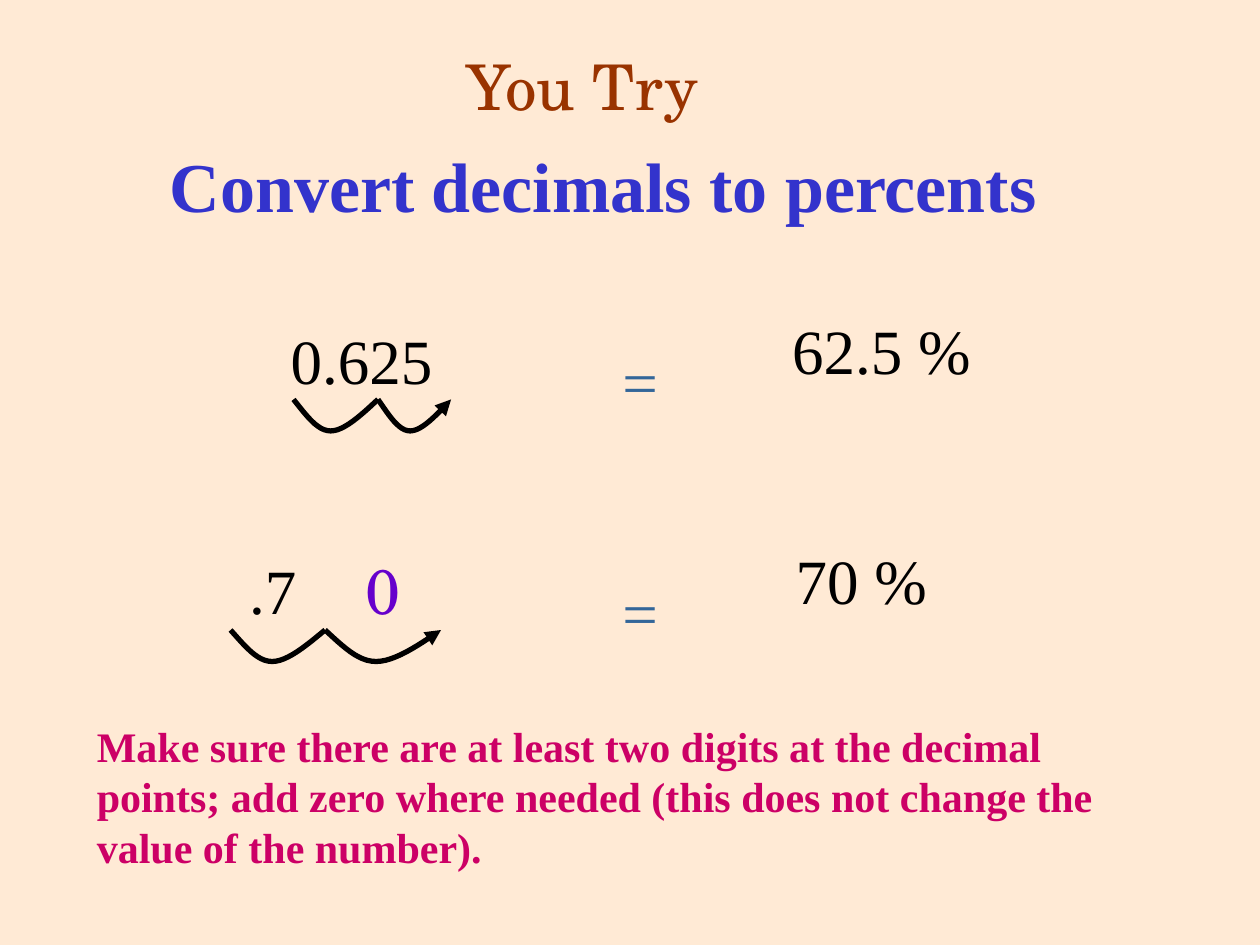
from dataclasses import dataclass
from pptx import Presentation
from pptx.dml.color import RGBColor as RGB
from pptx.enum.text import MSO_ANCHOR as Anchor, MSO_AUTO_SIZE as Fit, PP_ALIGN as Align
from pptx.oxml.ns import qn
from pptx.util import Inches, Pt
from lxml import etree


@dataclass
class Theme:
    back: str = "FFEAD5"
    title: str = "993300"
    head: str = "3333CC"
    ink: str = "000000"
    equal: str = "336699"
    note: str = "CC0066"
    zero: tuple = ("6600CC", "CC00CC")
    serif: str = "Times New Roman"
    school: str = "TeX Gyre Schola"
    large: int = 40
    main: int = 36
    small: int = 24
    line: int = 3


theme = Theme()
deck = Presentation()
deck.slide_width, deck.slide_height = Inches(10), Inches(7.5)
slide = deck.slides.add_slide(deck.slide_layouts[5])
slide.background.fill.solid()
slide.background.fill.fore_color.rgb = RGB.from_string(theme.back)


def write(text, box, shape=None, size=theme.main, font=theme.serif,
          color=theme.ink, bold=False, align=Align.CENTER, wrap=False):
    """Set text in a new box, or in the given placeholder."""
    place = [Inches(n) for n in box]
    shape = shape or slide.shapes.add_textbox(*place)
    shape.left, shape.top, shape.width, shape.height = place
    frame = shape.text_frame
    frame.text = text
    frame.word_wrap = wrap
    frame.auto_size = Fit.NONE
    frame.vertical_anchor = Anchor.TOP
    par = frame.paragraphs[0]
    par.alignment = align
    face = par.runs[0].font
    face.name, face.size, face.bold = font, Pt(size), bold
    if isinstance(color, tuple):
        face.fill.gradient()
        face.fill.gradient_angle = 270
        for stop, tone in zip(face.fill.gradient_stops, color):
            stop.color.rgb = RGB.from_string(tone)
    else:
        face.color.rgb = RGB.from_string(color)


def hop(left, right, top, arrow=False):
    """Draw one curved jump of the decimal point."""
    wide, high = right - left, 0.25
    form = slide.shapes.build_freeform(Inches(left), Inches(top))
    # Cubic curves through the low point, as short straight steps
    low = left + 0.44 * wide
    curves = [
        ((left, 0), (left + 0.15 * wide, high / 2), (left + 0.28 * wide, high), (low, high)),
        ((low, high), (left + 0.6 * wide, high), (left + 0.8 * wide, high / 2), (right, 0)),
    ]
    steps = 12
    dots = []
    for curve in curves:
        for step in range(1, steps + 1):
            t = step / steps
            parts = ((1 - t) ** 3, 3 * t * (1 - t) ** 2, 3 * t * t * (1 - t), t ** 3)
            x = sum(part * dot[0] for part, dot in zip(parts, curve))
            y = sum(part * dot[1] for part, dot in zip(parts, curve))
            dots.append((Inches(x), Inches(top + y)))
    form.add_line_segments(dots, close=False)
    shape = form.convert_to_shape()
    shape.shadow.inherit = False
    shape.fill.background()
    shape.line.width = Pt(theme.line)
    shape.line.color.rgb = RGB.from_string(theme.ink)
    if arrow:
        etree.SubElement(shape.line._get_or_add_ln(), qn("a:tailEnd"), type="triangle")


# Title and heading
write("You Try", (3.5, 0.33, 2.25, 0.67), shape=slide.shapes.title,
      font=theme.school, color=theme.title)
write("Convert decimals to percents", (1.25, 1.08, 7.58, 0.77), size=theme.large,
      color=theme.head, bold=True, align=Align.LEFT, wrap=True)

# Two examples: decimal, its box, percent, its box, stops of the hops
rows = [
    (2.5, "0.625", (1.58, 2.58), "62.5 %", (5.83, 2.33), (2.33, 3, 3.58)),
    (4.33, ".7", (1.75, 0.83), "70 %", (5.92, 1.83), (1.83, 2.58, 3.5)),
]
for top, number, near, percent, far, stops in rows:
    write(number, (near[0], top, near[1], 0.58))
    write("=", (4.83, top + 0.17, 0.5, 0.25), color=theme.equal)
    write(percent, (far[0], top - 0.08, far[1], 0.67))
    hop(stops[0], stops[1], top + 0.67)
    hop(stops[1], stops[2], top + 0.67, arrow=True)

# Added zero
write("0", (2.75, 4.33, 0.58, 0.58), font=theme.school, color=theme.zero)

# Closing note
write("Make sure there are at least two digits at the decimal points; add zero "
      "where needed (this does not change the value of the number).",
      (0.67, 5.67, 8.5, 1.3), size=theme.small, color=theme.note,
      bold=True, align=Align.LEFT, wrap=True)

deck.save("out.pptx")
